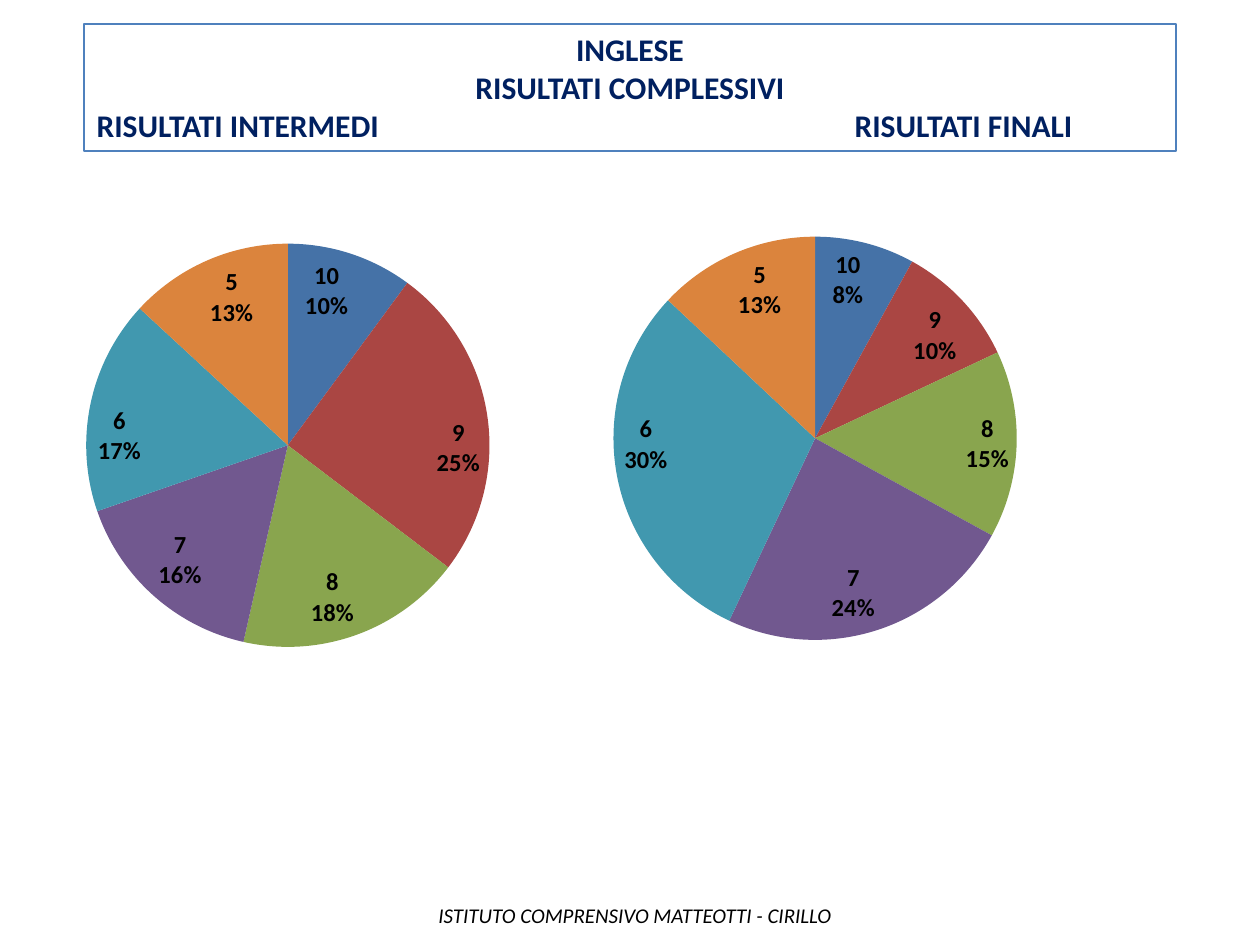
from lxml.etree import SubElement
from pptx import Presentation
from pptx.chart.data import CategoryChartData
from pptx.dml.color import RGBColor
from pptx.enum.chart import XL_CHART_TYPE, XL_LABEL_POSITION
from pptx.enum.text import MSO_ANCHOR, MSO_AUTO_SIZE, PP_ALIGN
from pptx.oxml import parse_xml
from pptx.oxml.ns import nsdecls, qn
from pptx.util import Pt

PX = 914400 // 126
GRADES = ["10", "9", "8", "7", "6", "5", "4"]
SLICES = ["4572A7", "AA4643", "89A54E", "71588F", "4198AF", "DB843D"]


def px(n):
    return n * PX


def color(code):
    return RGBColor.from_string(code)


def style(font, size, code, bold=False, italic=False):
    font.name, font.size = "Calibri", Pt(size)
    font.bold, font.italic = bold, italic
    font.color.rgb = color(code)


def write(frame, lines, align=PP_ALIGN.LEFT, **look):
    """Put one paragraph per line into the frame."""
    for i, line in enumerate(lines):
        para = frame.paragraphs[0] if i == 0 else frame.add_paragraph()
        para.alignment = align
        run = para.add_run()
        run.text = line
        style(run.font, **look)
    return frame.paragraphs


class Deck:
    navy, black, edge = "002060", "000000", "4F81BD"

    def __init__(self, wide, high):
        self.prs = Presentation()
        self.prs.slide_width, self.prs.slide_height = px(wide), px(high)
        self.slide = self.prs.slides.add_slide(self.prs.slide_layouts[5])

    def title(self, x, y, w, h, lines, pair, tab):
        """Centred lines, then a pair of headings split by a tab stop."""
        box = self.slide.shapes.title
        box.left, box.top, box.width, box.height = map(px, (x, y, w, h))
        box.line.color.rgb = color(self.edge)
        box.line.width = Pt(0.75)
        frame = box.text_frame
        frame.auto_size = MSO_AUTO_SIZE.NONE
        frame.vertical_anchor = MSO_ANCHOR.TOP
        paras = write(frame, lines + ["\t".join(pair)], PP_ALIGN.CENTER,
                      size=18, code=self.navy, bold=True)
        last = paras[-1]
        last.alignment = PP_ALIGN.LEFT
        tabs = SubElement(last._p.get_or_add_pPr(), qn("a:tabLst"))
        SubElement(tabs, qn("a:tab"), pos=str(px(tab)), algn="l")

    def note(self, x, y, w, h, line):
        box = self.slide.shapes.add_textbox(px(x), px(y), px(w), px(h))
        box.text_frame.word_wrap = True
        write(box.text_frame, [line], size=12, code=self.black, italic=True)

    def pie(self, x, y, w, h, vals, spot):
        """Spot is the left, top, width and height of the disc, as shares."""
        data = CategoryChartData()
        data.categories = GRADES
        data.add_series("Series 1", vals)
        chart = self.slide.shapes.add_chart(
            XL_CHART_TYPE.PIE, px(x), px(y), px(w), px(h), data).chart
        chart.has_legend = chart.has_title = False
        style(chart.font, 18, self.black)
        plot = chart.plots[0]
        plot.vary_by_categories = True
        for i, code in enumerate(SLICES):
            fill = plot.series[0].points[i].format.fill
            fill.solid()
            fill.fore_color.rgb = color(code)
        self.tags(plot)
        self.place(chart, spot)

    def tags(self, plot):
        plot.has_data_labels = True
        tags = plot.data_labels
        style(tags.font, 14, self.black, bold=True)
        tags.show_value = False
        tags.show_category_name = tags.show_percentage = True
        tags.number_format, tags.number_format_is_linked = "0%", False
        tags.position = XL_LABEL_POSITION.INSIDE_END
        # Grade above share
        split = parse_xml(f"<c:separator {nsdecls('c')}>\n</c:separator>")
        tags._element.find(qn("c:showBubbleSize")).addnext(split)

    def place(self, chart, spot):
        area = chart._chartSpace.chart.plotArea
        for old in area.findall(qn("c:layout")):
            area.remove(old)
        layout = parse_xml(f"<c:layout {nsdecls('c')}/>")
        manual = SubElement(layout, qn("c:manualLayout"))
        parts = [("layoutTarget", "inner"), ("xMode", "edge"), ("yMode", "edge")]
        parts += zip("xywh", spot)
        for name, val in parts:
            SubElement(manual, qn("c:" + name), val=str(val))
        area.insert(0, layout)


def main():
    deck = Deck(1260, 945)
    # Heading
    deck.title(84, 24, 1092, 127, ["INGLESE", "RISULTATI COMPLESSIVI"],
               ("RISULTATI INTERMEDI", "RISULTATI FINALI"), tab=758)
    # Footer
    deck.note(426, 896, 435, 38, "ISTITUTO COMPRENSIVO MATTEOTTI - CIRILLO")
    # Midterm and final results
    size = 0.41, 0.71
    deck.pie(54, 204, 995, 568, [10, 25, 18, 16, 17, 13, None],
             (0.03, 0.07, *size))
    deck.pie(64, 214, 995, 568, [8, 10, 15, 24, 30, 13, None],
             (0.55, 0.04, *size))
    deck.prs.save("out.pptx")


if __name__ == "__main__":
    main()
